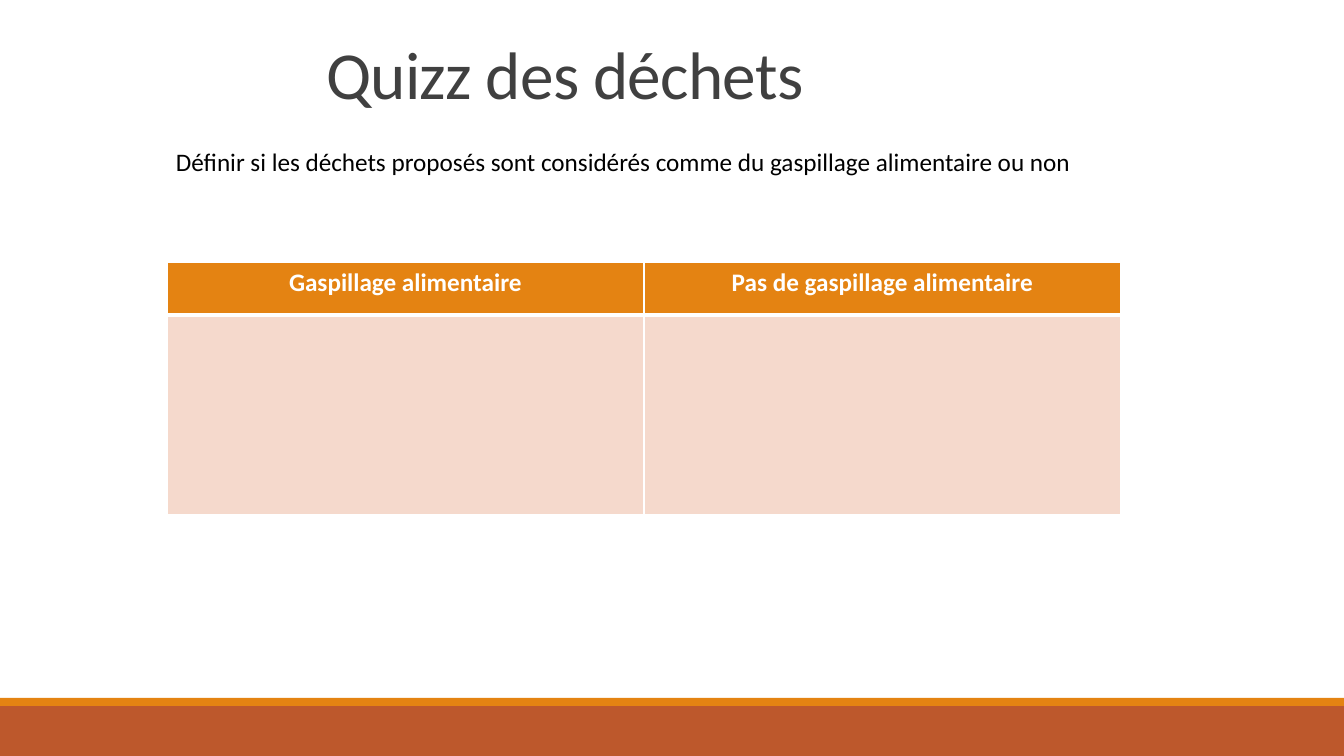
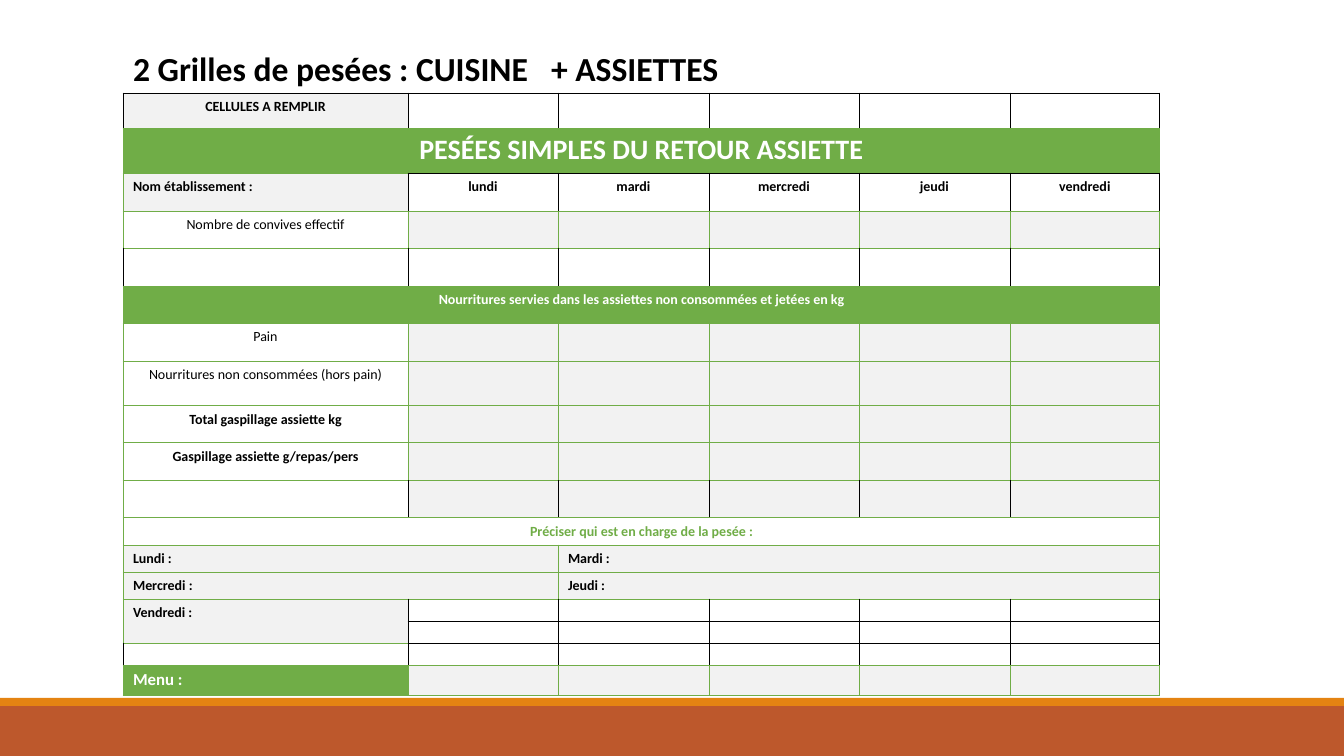
from dataclasses import dataclass
from typing import Optional

from lxml.etree import SubElement
from pptx import Presentation
from pptx.dml.color import RGBColor
from pptx.enum.shapes import MSO_SHAPE
from pptx.enum.text import MSO_ANCHOR, MSO_AUTO_SIZE, PP_ALIGN
from pptx.oxml.ns import qn
from pptx.util import Emu, Pt

SLIDE_WIDTH, SLIDE_HEIGHT = 1344, 756
EMU_PER_PX = 12192000 / SLIDE_WIDTH
FONT = "Calibri"
BLACK, WHITE, DARK_GREY, LIGHT_GREY = "000000", "FFFFFF", "404040", "F2F2F2"
ORANGE, RUST, PEACH, GREEN = "E48312", "BD582C", "F5D9CC", "70AD47"
SIDES = "LRTB"
DAYS = ("lundi", "mardi", "mercredi", "jeudi", "vendredi")


@dataclass(frozen=True)
class Box:
    """A rectangle in px."""

    left: int
    top: int
    width: int
    height: int


@dataclass(frozen=True)
class Band:
    """A coloured strip across the foot of every slide."""

    box: Box
    color: str


@dataclass(frozen=True)
class GridRow:
    """A row of the weighing grid; the dark fields name the black sides."""

    height: int
    texts: tuple = ()
    spans: tuple = (1, 1, 1, 1, 1, 1)
    label_fill: str = WHITE
    day_fill: str = LIGHT_GREY
    color: str = BLACK
    size: int = 10
    bold: bool = True
    label_align: PP_ALIGN = PP_ALIGN.CENTER
    dark_label: str = ""
    dark_days: str = ""
    dark_last: Optional[str] = None


BANDS = (
    Band(Box(0, 706, SLIDE_WIDTH, 50), RUST),
    Band(Box(0, 698, SLIDE_WIDTH, 8), ORANGE),
)


def full_row(height: int, text: str, fill: str, color: str, size: int = 10) -> GridRow:
    """Describe a row whose cells are merged into one."""
    return GridRow(height, (text,), (6,), fill, fill, color, size)


def names_row(left: str, right: str) -> GridRow:
    """Describe a row with two merged fields for names."""
    return GridRow(27, (left, right), (2, 4), LIGHT_GREY, label_align=PP_ALIGN.LEFT)


GRID_ROWS = (
    GridRow(35, ("CELLULES A REMPLIR",), label_fill=LIGHT_GREY, day_fill=WHITE,
            dark_label="LRT", dark_days="LRT"),
    full_row(45, "PESÉES SIMPLES DU RETOUR ASSIETTE", GREEN, WHITE, 20),
    GridRow(38, ("Nom établissement :", *DAYS), label_fill=LIGHT_GREY, day_fill=WHITE,
            label_align=PP_ALIGN.LEFT, dark_label="R", dark_days="LRT"),
    GridRow(37, ("Nombre de convives effectif",), bold=False),
    GridRow(38, day_fill=WHITE, dark_label="LR", dark_days="LR"),
    full_row(37, "Nourritures servies dans les assiettes non consommées et jetées en kg",
             GREEN, WHITE),
    GridRow(38, ("Pain",), bold=False),
    GridRow(45, ("Nourritures non consommées (hors pain)",), bold=False),
    GridRow(37, ("Total gaspillage assiette kg",)),
    GridRow(38, ("Gaspillage assiette g/repas/pers",)),
    GridRow(37, dark_label="R", dark_days="LR", dark_last="L"),
    full_row(27, "Préciser qui est en charge de la pesée :", WHITE, GREEN),
    names_row("Lundi :", "Mardi :"),
    names_row("Mercredi :", "Jeudi :"),
    GridRow(22, ("Vendredi :",), label_fill=LIGHT_GREY, day_fill=WHITE,
            label_align=PP_ALIGN.LEFT, dark_days="LRB"),
    GridRow(22, label_fill=LIGHT_GREY, day_fill=WHITE, dark_days="LRTB"),
    GridRow(22, day_fill=WHITE, dark_label="LR", dark_days="LRT"),
    GridRow(30, ("Menu :",), label_fill=GREEN, color=WHITE, size=12,
            label_align=PP_ALIGN.LEFT),
)
FRIDAY_ROW = 14


def px(length: float) -> Emu:
    """Turn px into EMU."""
    return Emu(round(length * EMU_PER_PX))


def rgb(color: str) -> RGBColor:
    """Turn a hex string into a colour."""
    return RGBColor.from_string(color)


def place(shape, box: Box) -> None:
    """Move and size a shape."""
    shape.left, shape.top = px(box.left), px(box.top)
    shape.width, shape.height = px(box.width), px(box.height)


def write_text(text_frame, text: str, *, size: int, color: str = BLACK, bold: bool = False,
               align: PP_ALIGN = PP_ALIGN.LEFT, line_spacing: float = 1.0,
               letter_spacing: int = 0, tab: int = 0) -> None:
    """Write one formatted paragraph; letter spacing is in hundredths of a point."""
    paragraph = text_frame.paragraphs[0]
    if tab:
        tabs = SubElement(paragraph._p.get_or_add_pPr(), qn("a:tabLst"))
        SubElement(tabs, qn("a:tab"), pos=str(px(tab)), algn="l")
    paragraph.alignment = align
    paragraph.line_spacing = line_spacing
    run = paragraph.add_run()
    run.text = text
    run.font.name, run.font.size, run.font.bold = FONT, Pt(size), bold
    run.font.color.rgb = rgb(color)
    if letter_spacing:
        run._r.get_or_add_rPr().set("spc", str(letter_spacing))


def add_title(slide, box: Box, text: str, **text_format) -> None:
    """Place and write the title placeholder."""
    title = slide.shapes.title
    place(title, box)
    frame = title.text_frame
    frame.word_wrap, frame.auto_size = True, MSO_AUTO_SIZE.NONE
    frame.vertical_anchor = MSO_ANCHOR.MIDDLE
    write_text(frame, text, **text_format)


def add_bands(presentation, slide) -> None:
    """Draw the foot bands and hand them to the slide master."""
    for index, band in enumerate(BANDS):
        shape = slide.shapes.add_shape(MSO_SHAPE.RECTANGLE, 0, 0, 0, 0)
        place(shape, band.box)
        shape.shadow.inherit = False
        shape.fill.solid()
        shape.fill.fore_color.rgb = rgb(band.color)
        shape.line.fill.background()
        presentation.slide_master.shapes.element.insert(2 + index, shape.element)


def add_grid(slide, left: int, top: int, widths: tuple, heights: tuple):
    """Add an unbanded table with the given column widths and row heights."""
    box = Box(left, top, sum(widths), sum(heights))
    frame = slide.shapes.add_table(len(heights), len(widths), 0, 0, 0, 0)
    place(frame, box)
    table = frame.table
    table.first_row = table.horz_banding = False
    for column, width in zip(table.columns, widths):
        column.width = px(width)
    for row, height in zip(table.rows, heights):
        row.height = px(height)
    return table


def style_cell(cell, fill: str, borders: dict) -> None:
    """Set the fill and the (colour, points) border of each side."""
    properties = cell._tc.get_or_add_tcPr()
    for side in SIDES:
        color, width = borders[side]
        line = SubElement(properties, qn(f"a:ln{side}"), w=str(Pt(width)))
        SubElement(SubElement(line, qn("a:solidFill")), qn("a:srgbClr"), val=color)
    cell.fill.solid()
    cell.fill.fore_color.rgb = rgb(fill)


def shrink_empty(cell) -> None:
    """Keep an empty cell from stretching its row."""
    SubElement(cell.text_frame.paragraphs[0]._p, qn("a:endParaRPr"), sz="600")


def build_quiz(slide) -> None:
    """Build the waste quiz slide."""
    add_title(slide, Box(316, 35, 510, 88), "Quizz des déchets", size=48, color=DARK_GREY,
              line_spacing=0.85, letter_spacing=-50)
    instruction = slide.shapes.add_textbox(0, 0, 0, 0)
    place(instruction, Box(166, 141, 933, 40))
    instruction.text_frame.word_wrap = True
    write_text(instruction.text_frame, "Définir si les déchets proposés sont considérés "
               "comme du gaspillage alimentaire ou non", size=18)
    table = add_grid(slide, 167, 262, (477, 477), (53, 200))
    thin = dict.fromkeys(SIDES, (WHITE, 1))
    for column, heading in enumerate(("Gaspillage alimentaire", "Pas de gaspillage alimentaire")):
        header, body = table.cell(0, column), table.cell(1, column)
        style_cell(header, ORANGE, {**thin, "B": (WHITE, 3)})
        style_cell(body, PEACH, {**thin, "T": (WHITE, 3)})
        write_text(header.text_frame, heading, size=18, color=WHITE, bold=True,
                   align=PP_ALIGN.CENTER)


def fill_grid_row(table, index: int, row: GridRow) -> None:
    """Style, merge and write one row of the weighing grid."""
    last = len(table.columns) - 1
    for column in range(last + 1):
        dark = row.dark_days if column else row.dark_label
        if column == last and row.dark_last is not None:
            dark = row.dark_last
        borders = {side: (BLACK if side in dark else GREEN, 0.5) for side in SIDES}
        style_cell(table.cell(index, column), row.day_fill if column else row.label_fill, borders)
    column = 0
    for position, span in enumerate(row.spans):
        cell = table.cell(index, column)
        if span > 1:
            cell.merge(table.cell(index, column + span - 1))
        if position < len(row.texts):
            centred = column and len(row.spans) > 2
            write_text(cell.text_frame, row.texts[position], size=row.size, color=row.color,
                       bold=row.bold, align=PP_ALIGN.CENTER if centred else row.label_align)
        column += span
    for column in range(last + 1):
        cell = table.cell(index, column)
        if not cell.text_frame.text:
            shrink_empty(cell)


def build_weighing(slide) -> None:
    """Build the weighing grid slide."""
    add_title(slide, Box(123, 43, 871, 50), "2 Grilles de pesées : CUISINE\t+ ASSIETTES",
              size=24, bold=True, tab=418)
    table = add_grid(slide, 123, 93, (285, 150, 151, 150, 151, 150),
                     tuple(row.height for row in GRID_ROWS))
    for index, row in enumerate(GRID_ROWS):
        fill_grid_row(table, index, row)
    table.cell(FRIDAY_ROW, 0).merge(table.cell(FRIDAY_ROW + 1, 0))


def main() -> None:
    """Build and save the presentation."""
    presentation = Presentation()
    presentation.slide_width, presentation.slide_height = px(SLIDE_WIDTH), px(SLIDE_HEIGHT)
    title_only = presentation.slide_layouts[5]
    quiz, weighing = (presentation.slides.add_slide(title_only) for _ in range(2))
    add_bands(presentation, quiz)
    build_quiz(quiz)
    build_weighing(weighing)
    presentation.save("out.pptx")


if __name__ == "__main__":
    main()
